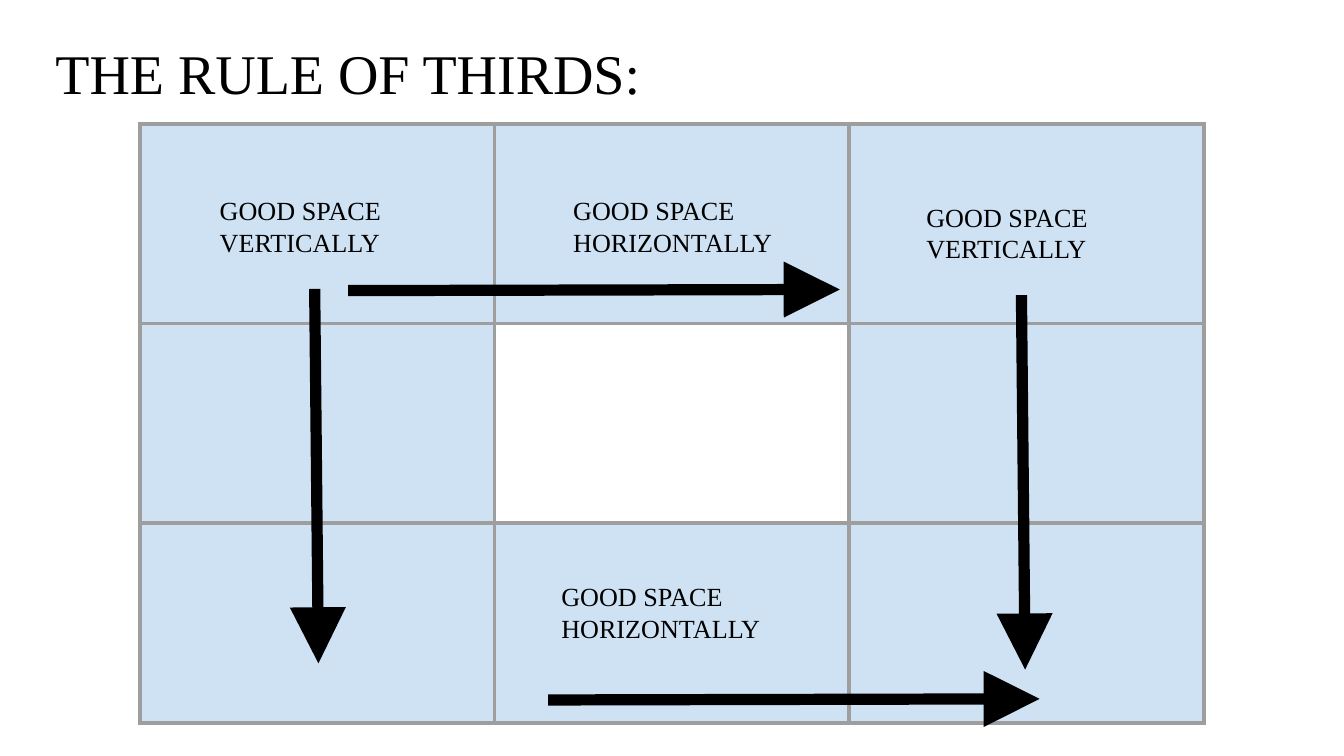
from dataclasses import dataclass

from lxml import etree
from pptx import Presentation
from pptx.dml.color import RGBColor
from pptx.enum.shapes import MSO_CONNECTOR
from pptx.enum.text import MSO_ANCHOR
from pptx.oxml.ns import qn
from pptx.util import Pt

STRAIGHT = MSO_CONNECTOR.STRAIGHT
TOP = MSO_ANCHOR.TOP


@dataclass(frozen=True)
class Theme:
    """Colours, type and line weights of the slide."""
    font: str = "Times New Roman"
    ink: str = "000000"
    good_space: str = "CFE2F3"
    border: str = "9E9E9E"
    title_size: float = 30
    label_size: float = 14
    border_width: float = 2.25
    arrow_width: float = 6
    inset: float = 7.2


@dataclass(frozen=True)
class Box:
    """A rectangle in points."""
    left: float
    top: float
    width: float
    height: float

    def lengths(self):
        """Return the four sides as slide lengths."""
        return [Pt(side) for side in (self.left, self.top, self.width, self.height)]


THEME = Theme()


def add_text(page, box, lines, size):
    """Place one paragraph per line in a text box."""
    frame = page.shapes.add_textbox(*box.lengths()).text_frame
    frame.word_wrap = True
    frame.vertical_anchor = TOP
    frame.margin_left = frame.margin_right = Pt(THEME.inset)
    frame.margin_top = frame.margin_bottom = Pt(THEME.inset)
    for index, line in enumerate(lines):
        para = frame.add_paragraph() if index else frame.paragraphs[0]
        span = para.add_run()
        span.text = line
        span.font.name = THEME.font
        span.font.size = Pt(size)
        span.font.color.rgb = RGBColor.from_string(THEME.ink)


def add_borders(cell):
    """Draw the four borders of a cell ahead of its fill."""
    properties = cell._tc.get_or_add_tcPr()
    for index, side in enumerate(("lnL", "lnR", "lnT", "lnB")):
        line = etree.Element(qn(f"a:{side}"), w=str(Pt(THEME.border_width)))
        fill = etree.SubElement(line, qn("a:solidFill"))
        etree.SubElement(fill, qn("a:srgbClr"), val=THEME.border)
        properties.insert(index, line)


def add_grid(page, box, count=3):
    """Place the grid of thirds, with its middle cell left open."""
    table = page.shapes.add_table(count, count, *box.lengths()).table
    table.first_row = table.horz_banding = False
    for third in range(count):
        table.columns[third].width = Pt(box.width / count)
        table.rows[third].height = Pt(box.height / count)
    middle = count // 2
    for row in range(count):
        for column in range(count):
            cell = table.cell(row, column)
            if row == column == middle:
                cell.fill.background()
            else:
                cell.fill.solid()
                cell.fill.fore_color.rgb = RGBColor.from_string(THEME.good_space)
            add_borders(cell)


def add_arrow(page, left, top, across, down):
    """Draw a heavy arrow from a start point."""
    ends = (left, top, left + across, top + down)
    arrow = page.shapes.add_connector(STRAIGHT, *(Pt(end) for end in ends))
    arrow.line.color.rgb = RGBColor.from_string(THEME.ink)
    arrow.line.width = Pt(THEME.arrow_width)
    etree.SubElement(arrow.line._get_or_add_ln(), qn("a:tailEnd"),
                     type="triangle", w="lg", len="lg")
    etree.SubElement(arrow._element.spPr, qn("a:effectLst"))


def add_vertical_space(page, box):
    """Place a label with an arrow running down from its bottom centre."""
    add_text(page, box, ("GOOD SPACE", "VERTICALLY"), THEME.label_size)
    add_arrow(page, box.left + box.width / 2, box.top + box.height, 2, 200.6)


def add_horizontal_space(page, box, arrow_left, arrow_top):
    """Place a label with an arrow running right, offset from its box."""
    add_text(page, box, ("GOOD SPACE", "HORIZONTALLY"), THEME.label_size)
    add_arrow(page, box.left + arrow_left, box.top + arrow_top, 263.4, -0.6)


def main():
    """Build the slide and save it."""
    deck = Presentation()
    deck.slide_width, deck.slide_height = Pt(720), Pt(405)
    page = deck.slides.add_slide(deck.slide_layouts[6])
    add_text(page, Box(22.6, 13.7, 671, 45.4), ("THE RULE OF THIRDS:",),
             THEME.title_size)
    add_grid(page, Box(75, 66.4, 570, 321))
    for left, top in ((110.6, 97.2), (489.2, 100.5)):
        add_vertical_space(page, Box(left, top, 116, 57.6))
    for left, top, arrow_left, arrow_top in ((300, 97.2, -113.5, 58.5),
                                             (293.6, 304, 0, 71)):
        add_horizontal_space(page, Box(left, top, 129.6, 57.6),
                             arrow_left, arrow_top)
    deck.save("out.pptx")


if __name__ == "__main__":
    main()
